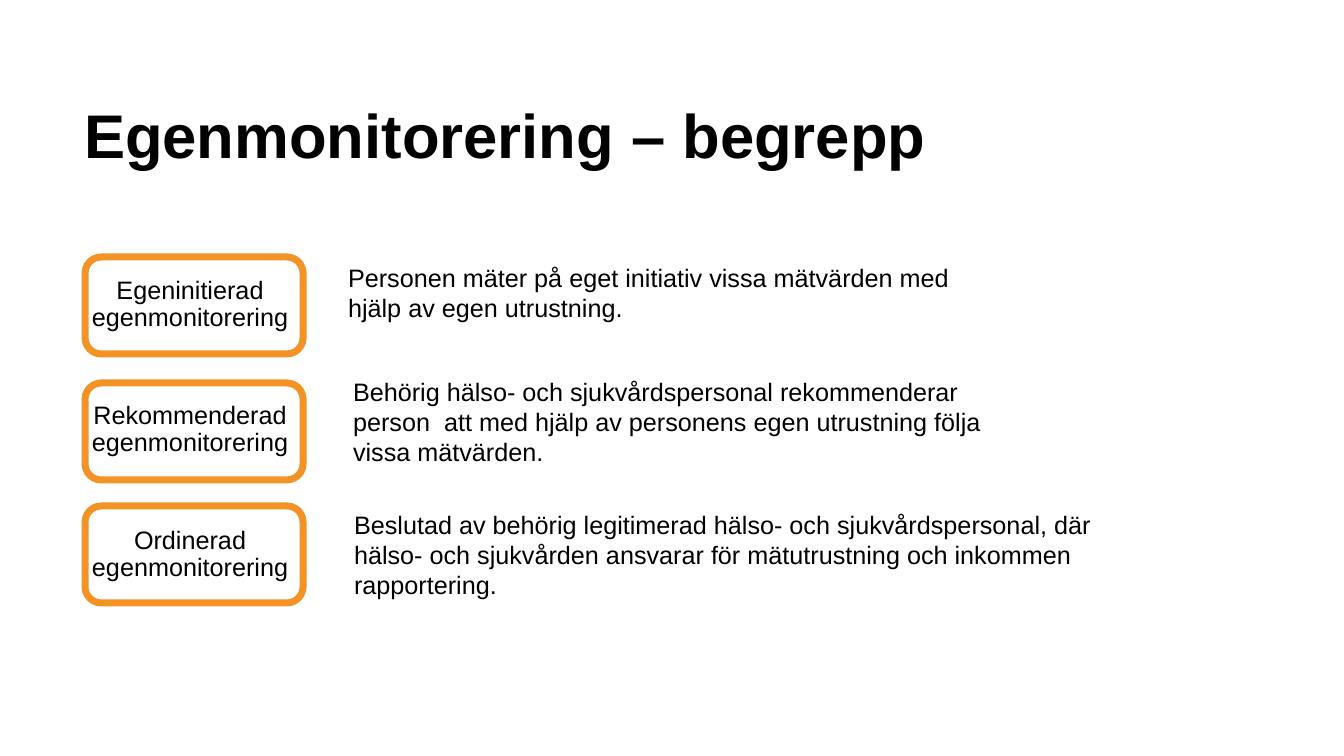
from pptx import Presentation
from pptx import util as u
from pptx.dml.color import RGBColor
from pptx.enum import shapes, text

BLACK = RGBColor(0x00, 0x00, 0x00)
ORANGE = RGBColor(0xF3, 0x93, 0x25)
PX = 9071  # EMU in one px

TITLE = "Egenmonitorering – begrepp"
# label, label width, frame top, definition, definition box
TERMS = [
    ("Egeninitierad egenmonitorering", 344, 257,
     "Personen mäter på eget initiativ vissa mätvärden med hjälp av egen "
     "utrustning.", (338, 257, 641, 72)),
    ("Rekommenderad egenmonitorering", 344, 383,
     "Behörig hälso- och sjukvårdspersonal rekommenderar person  att med "
     "hjälp av personens egen utrustning följa vissa mätvärden.",
     (343, 371, 699, 102)),
    ("Ordinerad egenmonitorering", 258, 506,
     "Beslutad av behörig legitimerad hälso- och sjukvårdspersonal, där "
     "hälso- och sjukvården ansvarar för mätutrustning och inkommen "
     "rapportering.", (344, 504, 763, 102)),
]
MID = 190  # centre line of the labels
LABEL_TOP, LABEL_STEP, LABEL_H = 273, 125, 66
FRAME_X, FRAME_W, FRAME_H = 85, 218, 97


def emu(box):
    return [u.Emu(n * PX) for n in box]


def write(shape, words, size=18, bold=False, align=text.PP_ALIGN.LEFT,
          lead=1.0):
    frame = shape.text_frame
    frame.word_wrap = True
    frame.vertical_anchor = text.MSO_ANCHOR.TOP
    para = frame.paragraphs[0]
    para.alignment = align
    para.line_spacing = lead
    run = para.add_run()
    run.text = words
    font = run.font
    font.name, font.size, font.bold = "Arial", u.Pt(size), bold
    font.color.rgb = BLACK


def main():
    prs = Presentation()
    prs.slide_width, prs.slide_height = u.Inches(13.33), u.Inches(7.5)
    slide = prs.slides.add_slide(prs.slide_layouts[5])
    parts = slide.shapes

    title = parts.title
    title.left, title.top, title.width, title.height = emu((74, 97, 1059, 136))
    write(title, TITLE, size=44, bold=True, lead=0.95)

    for row, (label, width, _, meaning, box) in enumerate(TERMS):
        spot = (MID - width // 2, LABEL_TOP + row * LABEL_STEP, width, LABEL_H)
        write(parts.add_textbox(*emu(spot)), label,
              align=text.PP_ALIGN.CENTER, lead=0.9)
        write(parts.add_textbox(*emu(box)), meaning)

    for _, _, top, _, _ in TERMS:
        frame = parts.add_shape(shapes.MSO_SHAPE.ROUNDED_RECTANGLE,
                                *emu((FRAME_X, top, FRAME_W, FRAME_H)))
        frame.shadow.inherit = False
        frame.fill.background()
        frame.line.color.rgb = ORANGE
        frame.line.width = u.Pt(5)

    prs.save("out.pptx")


if __name__ == "__main__":
    main()
